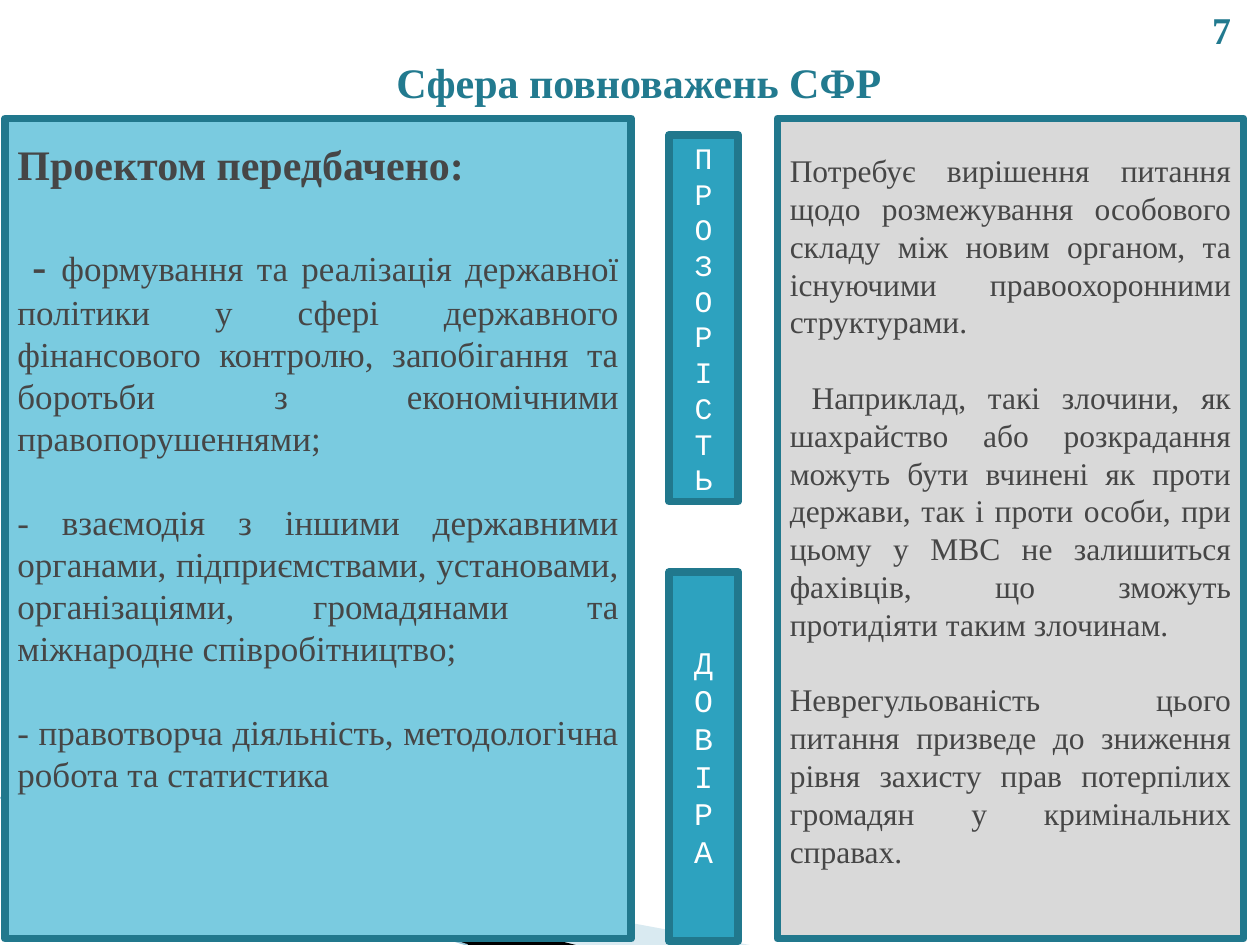
from lxml import etree
from pptx import Presentation
from pptx.dml.color import RGBColor
from pptx.enum.shapes import MSO_CONNECTOR, MSO_SHAPE
from pptx.enum.text import MSO_ANCHOR, PP_ALIGN
from pptx.oxml.ns import qn
from pptx.util import Inches, Pt

RECTANGLE = MSO_SHAPE.RECTANGLE
STRAIGHT = MSO_CONNECTOR.STRAIGHT
TOP, MIDDLE = MSO_ANCHOR.TOP, MSO_ANCHOR.MIDDLE
CENTER, JUSTIFY = PP_ALIGN.CENTER, PP_ALIGN.JUSTIFY
SERIF, MONO = "Times New Roman", "Courier New"
TEAL, BORDER, INK = "227A8F", "21788D", "464646"
TITLE_ONLY = 5

DUTIES = [
    [("Проектом передбачено:", 24, True)],
    [(" - ", 24, True),
     ("формування та реалізація державної політики у сфері державного "
      "фінансового контролю, запобігання та боротьби з економічними "
      "правопорушеннями;", 20, False)],
    [("- взаємодія з іншими державними органами, підприємствами, установами, "
      "організаціями, громадянами та міжнародне співробітництво;", 20, False)],
    [("- правотворча діяльність, методологічна робота та статистика", 20, False)],
]
ISSUES = [
    [("Потребує вирішення питання щодо розмежування особового складу між новим "
      "органом, та існуючими правоохоронними структурами.", 18, False)],
    [(" Наприклад, такі злочини, як шахрайство або розкрадання можуть бути "
      "вчинені як проти держави, так і проти особи, при цьому у МВС не "
      "залишиться фахівців, що зможуть протидіяти таким злочинам.", 18, False)],
    [("Неврегульованість цього питання призведе до зниження рівня захисту прав "
      "потерпілих громадян у кримінальних справах.", 18, False)],
]


def color(value):
    return RGBColor.from_string(value)


class SlideBuilder:
    def __init__(self, slide):
        self.slide = slide

    def add_text(self, frame, paragraphs, font, ink, align, anchor, gaps=()):
        """Fill a frame with paragraphs of (text, size, bold) runs; gaps are points before each."""
        frame.word_wrap = True
        frame.vertical_anchor = anchor
        for index, runs in enumerate(paragraphs):
            para = frame.paragraphs[0] if index == 0 else frame.add_paragraph()
            para.alignment = align
            if index and gaps:
                para.space_before = Pt(gaps[index - 1])
            for text, size, bold in runs:
                span = para.add_run()
                span.text = text
                span.font.name = font
                span.font.size = Pt(size)
                span.font.bold = bold
                span.font.color.rgb = color(ink)

    def title(self, text, left, top, width, height):
        box = self.slide.shapes.title
        box.left, box.top = Inches(left), Inches(top)
        box.width, box.height = Inches(width), Inches(height)
        self.add_text(box.text_frame, [[(text, 24, True)]], SERIF, TEAL, CENTER, MIDDLE)

    def label(self, text, size, left, top, width, height):
        box = self.slide.shapes.add_textbox(
            Inches(left), Inches(top), Inches(width), Inches(height))
        self.add_text(box.text_frame, [[(text, size, True)]], SERIF, TEAL, CENTER, MIDDLE)

    def panel(self, fill, left, top, width, height):
        box = self.slide.shapes.add_shape(
            RECTANGLE, Inches(left), Inches(top), Inches(width), Inches(height))
        box.shadow.inherit = False
        box.fill.solid()
        box.fill.fore_color.rgb = color(fill)
        box.line.color.rgb = color(BORDER)
        box.line.width = Pt(4.33)
        return box.text_frame

    def text_panel(self, paragraphs, gaps, inset, fill, left, width):
        frame = self.panel(fill, left, 0.94, width, 6.51)
        frame.margin_top = Inches(inset)
        self.add_text(frame, paragraphs, SERIF, INK, JUSTIFY, TOP, gaps)

    def letter_column(self, word, size, top, height):
        """Stack the letters of a word, one paragraph each."""
        frame = self.panel("2DA2BF", 5.31, top, 0.55, height)
        letters = [[(letter, size, False)] for letter in word]
        self.add_text(frame, letters, MONO, "FFFFFF", CENTER, MIDDLE)

    def wedge(self, points, fill, opacity=100):
        corners = [(Inches(x), Inches(y)) for x, y in points]
        builder = self.slide.shapes.build_freeform(*corners[0])
        builder.add_line_segments(corners[1:], close=True)
        shape = builder.convert_to_shape()
        shape.shadow.inherit = False
        shape.fill.solid()
        shape.fill.fore_color.rgb = color(fill)
        shape.line.fill.background()
        if opacity < 100:
            tint = shape._element.spPr.find(qn("a:solidFill")).find(qn("a:srgbClr"))
            etree.SubElement(tint, qn("a:alpha"), val=str(opacity * 1000))

    def line(self, start, end, stroke, width):
        connector = self.slide.shapes.add_connector(
            STRAIGHT, *(Inches(value) for value in start + end))
        connector.line.color.rgb = color(stroke)
        connector.line.width = Pt(width)
        etree.SubElement(connector._element.spPr, qn("a:effectLst"))


def main():
    deck = Presentation()
    deck.slide_width, deck.slide_height = Inches(10), Inches(7.5)
    page = SlideBuilder(deck.slides.add_slide(deck.slide_layouts[TITLE_ONLY]))

    page.wedge([(0.55, 6.5), (5.95, 7.5), (4.56, 7.5)], "A0CBDC", 40)
    page.wedge([(0.53, 6.49), (4.57, 7.5), (3.72, 7.5)], "000000")
    page.line((0, 6.33), (3.71, 7.5), "97C5D8", 0.95)

    page.text_panel(DUTIES, (29, 24, 24), 0.16, "7ACBE0", 0.04, 4.97)
    page.title("Сфера повноважень СФР", 1.52, 0.3, 7.1, 0.69)
    page.text_panel(ISSUES, (21.6, 21.6), 0.26, "D9D9D9", 6.17, 3.7)
    page.letter_column("ПРОЗОРІСТЬ", 17, 1.07, 2.91)
    page.letter_column("ДОВІРА", 18, 4.54, 2.93)
    page.label("7", 21.6, 9.46, 0.02, 0.47, 0.43)

    deck.save("out.pptx")


if __name__ == "__main__":
    main()
